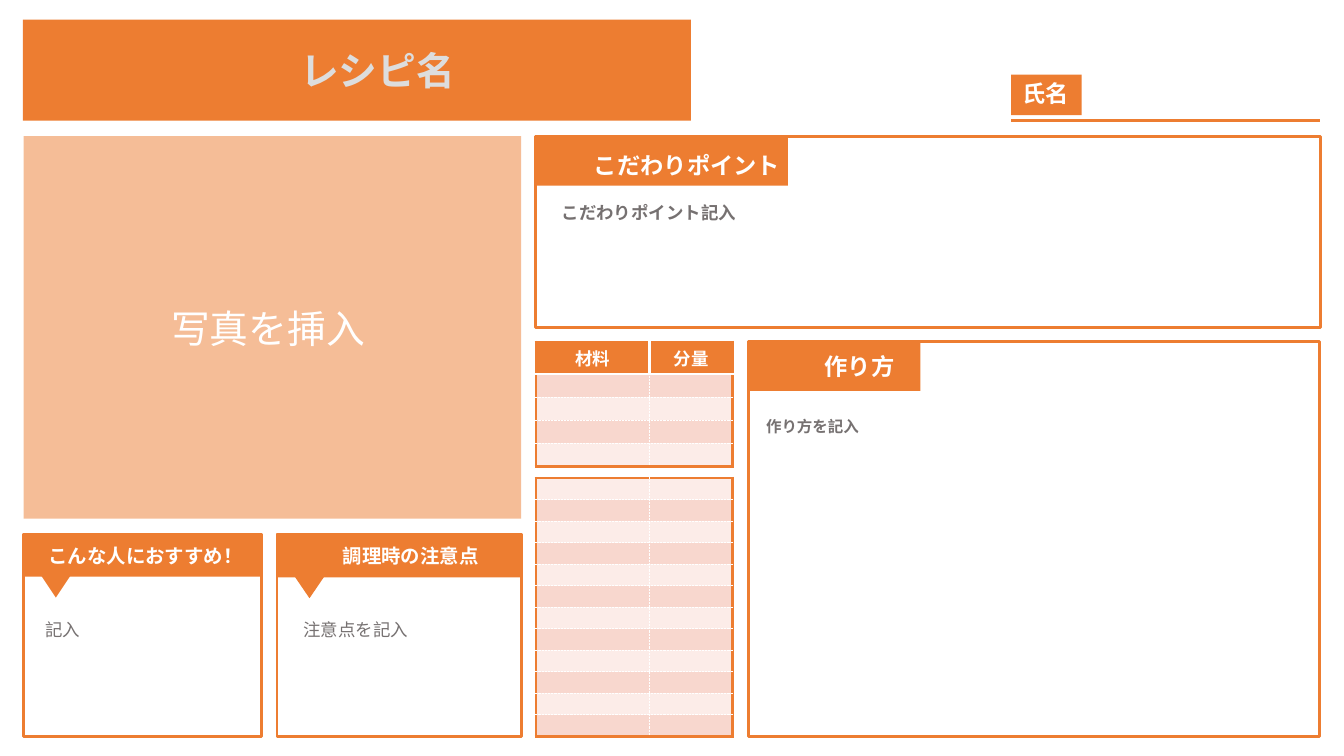
from lxml.etree import SubElement
from pptx import Presentation
from pptx.dml.color import RGBColor
from pptx.enum.shapes import MSO_CONNECTOR, MSO_SHAPE
from pptx.enum.text import MSO_ANCHOR, MSO_AUTO_SIZE, PP_ALIGN
from pptx.oxml.ns import qn
from pptx.util import Inches, Pt

COLORS = {"orange": "ED7D31", "white": "FFFFFF", "gray": "767171", "silver": "DDDDDD",
          "dark_band": "F8D7CE", "light_band": "FCECE8"}
FONT = "Calibri"
LINE_WIDTH = 3

# left, top, width, height
FRAMES = [
    (7.68, 1.95, 11.24, 2.74),
    (10.72, 4.89, 8.19, 5.66),
    (3.97, 7.65, 3.5, 2.9),
    (0.34, 7.65, 3.41, 2.9),
]
BANNERS = [
    (0.33, 0.28, 9.57, 1.45),
    (7.68, 1.96, 3.61, 0.7),
    (10.72, 4.89, 2.47, 0.71),
    (0.33, 7.65, 3.41, 0.61),
    (3.97, 7.66, 3.48, 0.61),
    (14.49, 1.07, 1.01, 0.58),
]
PHOTO_AREA = (0.34, 1.95, 7.13, 5.48)
POINTERS = [(0.56, 8.2, 0.48, 0.36), (4.19, 8.21, 0.49, 0.36)]
NAME_LINE = (14.49, 1.73, 18.92, 1.73)

HEADING = {"size": 24, "color": "white", "bold": True, "align": PP_ALIGN.CENTER}
SMALL_HEADING = {**HEADING, "size": 20}
PHOTO_HINT = {**HEADING, "size": 40, "bold": False}
TITLE = {**HEADING, "size": 40, "color": "silver", "anchor": MSO_ANCHOR.MIDDLE, "grow": False}
TABLE_HEADING = {**HEADING, "size": 18}
BODY = {"size": 18, "color": "gray", "bold": False, "spacing": 1.3}
BOLD_BODY = {**BODY, "bold": True}
STEPS = {"size": 16, "color": "gray", "bold": True, "grow": False}

TEXTS = [
    ("作り方", (11.44, 5, 1.75, 0.5), HEADING),
    ("写真を挿入", (2, 4.31, 3.68, 0.77), PHOTO_HINT),
    ("こんな人におすすめ！", (0.56, 7.75, 3.05, 0.44), SMALL_HEADING),
    ("調理時の注意点", (4.69, 7.75, 2.39, 0.44), SMALL_HEADING),
    ("こだわりポイント", (8.4, 2.12, 2.89, 0.5), HEADING),
    ("氏名", (14.41, 1.09, 1.16, 0.5), HEADING),
    ("作り方を記入", (10.88, 5.93, 8.04, 3.62), STEPS),
    ("レシピ名", (2.13, 0.65, 6.56, 0.71), TITLE),
    ("こだわりポイント記入", (7.95, 2.76, 10.97, 0.47), BOLD_BODY),
    ("記入", (0.55, 8.73, 3.15, 0.47), BODY),
    ("注意点を記入", (4.25, 8.73, 3.28, 0.47), BODY),
]

COLUMN_WIDTHS = [1.63, 1.19]
# left, top, header labels, header height, number of empty rows, their height
TABLES = [
    (7.68, 4.9, ["材料", "分量"], 0.46, 4, 0.33),
    (7.68, 6.85, [], 0, 12, 3.7 / 12),
]
OUTER_BORDER = ("orange", LINE_WIDTH, "solid")
HEADER_BORDER = ("white", LINE_WIDTH, "solid")
INNER_BORDER = ("white", 1, "sysDot")


def rgb(name):
    return RGBColor.from_string(COLORS[name])


def paint(fill, color):
    fill.solid()
    fill.fore_color.rgb = rgb(color)


def add_box(slide, box, fill=None, line=None, kind=MSO_SHAPE.RECTANGLE):
    shape = slide.shapes.add_shape(kind, *map(Inches, box))
    shape.shadow.inherit = False
    if fill:
        paint(shape.fill, fill)
    else:
        shape.fill.background()
    if line:
        shape.line.color.rgb = rgb(line)
        shape.line.width = Pt(LINE_WIDTH)
    else:
        shape.line.fill.background()
    return shape


def write(paragraph, text, style):
    paragraph.alignment = style.get("align", PP_ALIGN.LEFT)
    if "spacing" in style:
        paragraph.line_spacing = style["spacing"]
    run = paragraph.add_run()
    run.text = text
    values = {"name": FONT, "size": Pt(style["size"]), "bold": style["bold"]}
    for attribute, value in values.items():
        setattr(run.font, attribute, value)
    run.font.color.rgb = rgb(style["color"])


def add_text(slide, text, box, style):
    frame = slide.shapes.add_textbox(*map(Inches, box)).text_frame
    frame.word_wrap = True
    if style.get("grow", True):
        frame.auto_size = MSO_AUTO_SIZE.SHAPE_TO_FIT_TEXT
    frame.vertical_anchor = style.get("anchor", MSO_ANCHOR.TOP)
    write(frame.paragraphs[0], text, style)


def set_border(cell, side, border):
    color, width, dash = border
    line = SubElement(cell._tc.get_or_add_tcPr(), qn(f"a:ln{side}"), w=str(Pt(width)))
    fill = SubElement(line, qn("a:solidFill"))
    SubElement(fill, qn("a:srgbClr"), val=COLORS[color])
    SubElement(line, qn("a:prstDash"), val=dash)


def cell_borders(row, column, row_count, has_header):
    """Return the borders in the order that the file format demands."""
    in_header = has_header and row == 0
    inner = HEADER_BORDER if in_header else INNER_BORDER
    above = HEADER_BORDER if has_header and row == 1 else inner
    return {
        "L": OUTER_BORDER if column == 0 else inner,
        "R": OUTER_BORDER if column == len(COLUMN_WIDTHS) - 1 else inner,
        "T": OUTER_BORDER if row == 0 else above,
        "B": OUTER_BORDER if row == row_count - 1 else inner,
    }


def add_ingredients(slide, left, top, labels, header_height, empty_rows, row_height):
    heights = ([header_height] if labels else []) + [row_height] * empty_rows
    box = (left, top, sum(COLUMN_WIDTHS), sum(heights))
    table = slide.shapes.add_table(len(heights), len(COLUMN_WIDTHS), *map(Inches, box)).table
    table.first_row = table.horz_banding = False
    for column, width in zip(table.columns, COLUMN_WIDTHS):
        column.width = Inches(width)
    for row, height in enumerate(heights):
        table.rows[row].height = Inches(height)
        for column in range(len(COLUMN_WIDTHS)):
            cell = table.cell(row, column)
            cell.margin_top = cell.margin_bottom = Inches(0.02)
            for side, border in cell_borders(row, column, len(heights), bool(labels)).items():
                set_border(cell, side, border)
            paragraph = cell.text_frame.paragraphs[0]
            if labels and row == 0:
                paint(cell.fill, "orange")
                cell.vertical_anchor = MSO_ANCHOR.MIDDLE
                write(paragraph, labels[column], TABLE_HEADING)
            else:
                paint(cell.fill, "dark_band" if row % 2 else "light_band")
                # A small end mark lets the empty row keep its height
                SubElement(paragraph._p, qn("a:endParaRPr"), sz="1000")


def main():
    presentation = Presentation()
    presentation.slide_width = Inches(19.26)
    presentation.slide_height = Inches(10.83)
    slide = presentation.slides.add_slide(presentation.slide_layouts[6])

    for box in FRAMES:
        add_box(slide, box, line="orange")
    for box in BANNERS:
        add_box(slide, box, fill="orange")
    photo = add_box(slide, PHOTO_AREA, fill="orange")
    photo_color = photo._element.spPr.find(qn("a:solidFill"))[0]
    SubElement(photo_color, qn("a:alpha"), val="50000")
    for box in POINTERS:
        add_box(slide, box, fill="orange", kind=MSO_SHAPE.ISOSCELES_TRIANGLE).rotation = 180

    name_line = slide.shapes.add_connector(MSO_CONNECTOR.STRAIGHT, *map(Inches, NAME_LINE))
    name_line.line.color.rgb = rgb("orange")
    name_line.line.width = Pt(LINE_WIDTH)
    SubElement(name_line._element.spPr, qn("a:effectLst"))

    for table in TABLES:
        add_ingredients(slide, *table)
    for text, box, style in TEXTS:
        add_text(slide, text, box, style)
    presentation.save("out.pptx")


if __name__ == "__main__":
    main()
